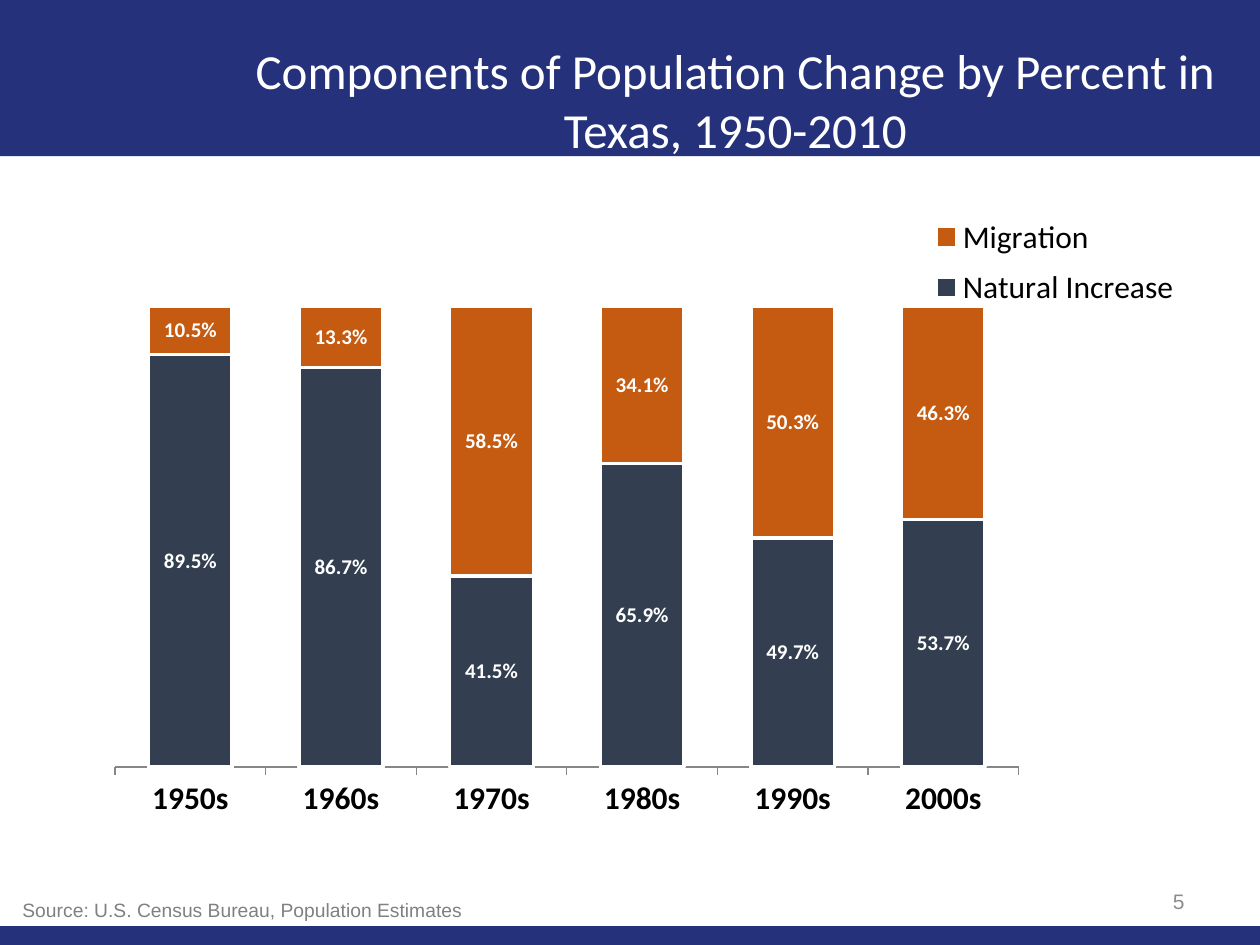
from lxml import etree
from pptx import Presentation
from pptx.chart.data import CategoryChartData
from pptx.dml.color import RGBColor
from pptx.enum.chart import XL_CHART_TYPE as ChartType, XL_LEGEND_POSITION as LegendPosition
from pptx.enum.chart import XL_TICK_LABEL_POSITION as LabelPosition, XL_TICK_MARK as TickMark
from pptx.enum.shapes import MSO_SHAPE as Shape
from pptx.enum.text import MSO_ANCHOR as Anchor, PP_ALIGN as Align
from pptx.oxml.ns import qn
from pptx.util import Inches, Pt

NAVY, WHITE, BLACK = "25327B", "FFFFFF", "000000"
TITLE = "Components of Population Change by Percent in Texas, 1950-2010"
SOURCE = "Source: U.S. Census Bureau, Population Estimates"
PAGE_NUMBER = "5"

DECADES = ["1950s", "1960s", "1970s", "1980s", "1990s", "2000s"]
SERIES = [
    ("Natural Increase", "333F50", [0.895, 0.867, 0.415, 0.659, 0.497, 0.537]),
    ("Migration", "C55A11", [0.105, 0.133, 0.585, 0.341, 0.503, 0.463]),
]
BANDS = [(0, 1.24), (7.35, 0.15)]  # top, height
PLOT_AREA = (0.02, 0.17, 0.74, 0.73)  # shares of the chart: x, y, w, h
LEGEND_AREA = (0.68, 0.01, 0.22, 0.18)


def color(value):
    return RGBColor.from_string(value)


def format_font(font, size, fill, name="Calibri", bold=False):
    font.size, font.name, font.bold = Pt(size), name, bold
    font.color.rgb = color(fill)


def place(shape, left, top, width, height):
    shape.left, shape.top = Inches(left), Inches(top)
    shape.width, shape.height = Inches(width), Inches(height)


def write(shape, text, size, fill, name="Arial", align=Align.LEFT, anchor=Anchor.TOP):
    frame = shape.text_frame
    frame.word_wrap = True
    frame.vertical_anchor = anchor
    paragraph = frame.paragraphs[0]
    paragraph.alignment = align
    run = paragraph.add_run()
    run.text = text
    format_font(run.font, size, fill, name)


def set_layout(element, index, area, inner=False):
    """Give a plot area or legend a fixed place inside the chart."""
    for old in element.findall(qn("c:layout")):
        element.remove(old)
    layout = etree.Element(qn("c:layout"))
    manual = etree.SubElement(layout, qn("c:manualLayout"))
    settings = [("layoutTarget", "inner")] if inner else []
    settings += [("xMode", "edge"), ("yMode", "edge")]
    settings += zip("xywh", area)
    for tag, value in settings:
        etree.SubElement(manual, qn(f"c:{tag}")).set("val", str(value))
    element.insert(index, layout)


def add_population_chart(slide):
    data = CategoryChartData(number_format="0.0%")
    data.categories = DECADES
    for name, _, values in SERIES:
        data.add_series(name, values)
    box = [Inches(length) for length in (0.72, 1.58, 9.69, 5.01)]
    chart = slide.shapes.add_chart(ChartType.COLUMN_STACKED, *box, data).chart
    format_font(chart.font, 18, BLACK)
    chart.has_title = False

    chart.has_legend = True
    chart.legend.position = LegendPosition.RIGHT
    chart.legend.include_in_layout = False
    format_font(chart.legend.font, 18, BLACK)

    values_axis = chart.value_axis
    values_axis.minimum_scale, values_axis.maximum_scale = 0, 1
    values_axis.has_major_gridlines = False
    values_axis.visible = False
    decades_axis = chart.category_axis
    decades_axis.major_tick_mark = TickMark.OUTSIDE
    decades_axis.tick_label_position = LabelPosition.LOW
    decades_axis.format.line.color.rgb = color("868686")
    format_font(decades_axis.tick_labels.font, 18, BLACK, bold=True)

    plot = chart.plots[0]
    plot.gap_width, plot.overlap = 80, 100
    plot.vary_by_categories = False
    for series, (_, fill, _) in zip(plot.series, SERIES):
        series.format.fill.solid()
        series.format.fill.fore_color.rgb = color(fill)
        series.format.line.color.rgb = color(WHITE)
        series.format.line.width = Pt(2)
        labels = series.data_labels
        labels.show_value = True
        labels.number_format, labels.number_format_is_linked = "0.0%", False
        format_font(labels.font, 12, WHITE, bold=True)

    plot_area = chart.element.find(f".//{qn('c:plotArea')}")
    set_layout(plot_area, 0, PLOT_AREA, inner=True)
    set_layout(chart.element.find(f".//{qn('c:legend')}"), 1, LEGEND_AREA)


def main():
    presentation = Presentation()
    presentation.slide_width, presentation.slide_height = Inches(10), Inches(7.5)
    slide = presentation.slides.add_slide(presentation.slide_layouts[5])
    title = slide.shapes.title

    for top, height in BANDS:
        band = slide.shapes.add_shape(Shape.RECTANGLE, 0, Inches(top), Inches(10), Inches(height))
        band.shadow.inherit = False
        band.fill.solid()
        band.fill.fore_color.rgb = color(NAVY)
        band.line.fill.background()

    add_population_chart(slide)

    # Bring the title in front of the band
    slide.shapes._spTree.append(title._element)
    place(title, 1.92, 0.25, 7.83, 1.08)
    write(title, TITLE, 28, WHITE, "Calibri", Align.CENTER, Anchor.MIDDLE)

    source = slide.shapes.add_textbox(Inches(0.08), Inches(7.08), Inches(5), Inches(0.29))
    write(source, SOURCE, 11, "808080")
    number = slide.shapes.add_textbox(Inches(7.17), Inches(6.95), Inches(2.33), Inches(0.4))
    write(number, PAGE_NUMBER, 12, "8C8C8C", align=Align.RIGHT, anchor=Anchor.MIDDLE)

    presentation.save("out.pptx")


if __name__ == "__main__":
    main()
